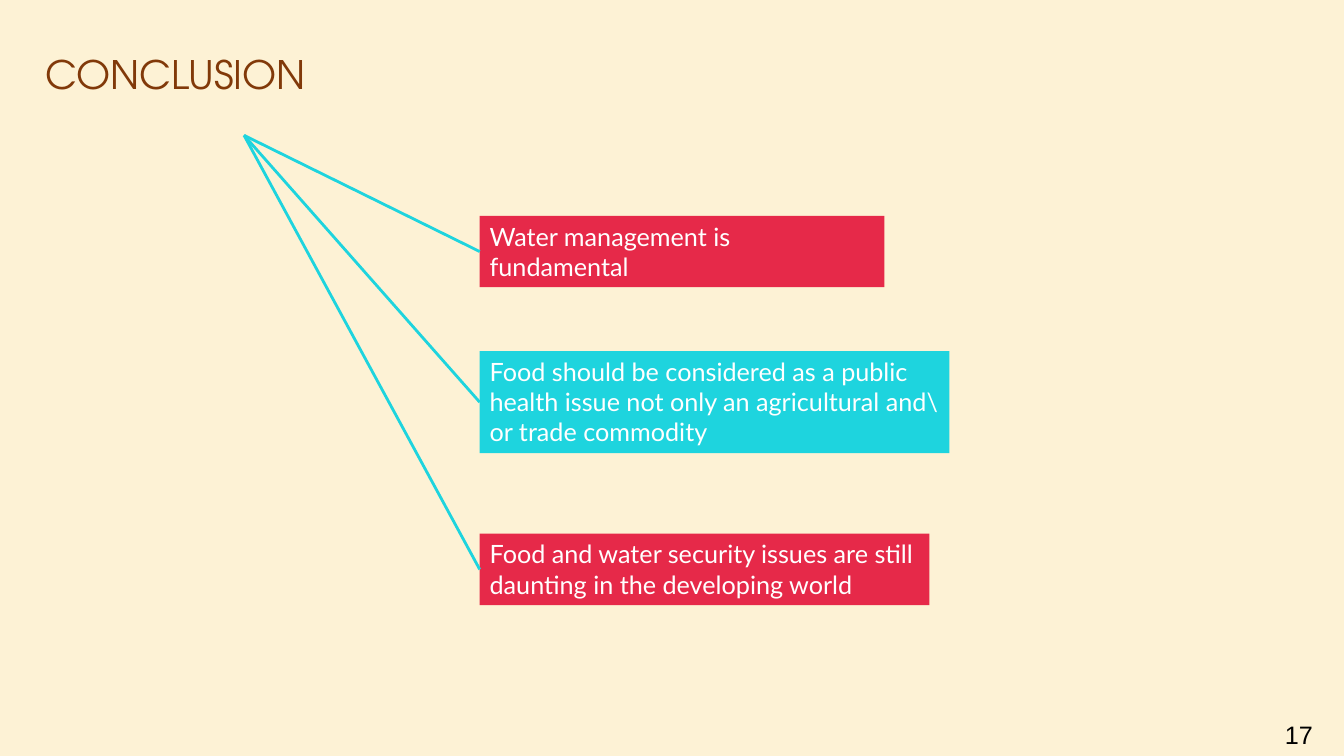
from pptx import Presentation
from pptx.dml.color import RGBColor
from pptx.enum.shapes import MSO_CONNECTOR, MSO_SHAPE
from pptx.enum.text import MSO_ANCHOR, PP_ALIGN
from pptx.util import Cm, Pt
from lxml import etree

RECT = MSO_SHAPE.RECTANGLE
STRAIGHT = MSO_CONNECTOR.STRAIGHT
TOP, MIDDLE = MSO_ANCHOR.TOP, MSO_ANCHOR.MIDDLE
LEFT = PP_ALIGN.LEFT
DRAWING_NS = "http://schemas.openxmlformats.org/drawingml/2006/main"

CREAM, BROWN, RED, CYAN = "FDF2D5", "813909", "E62949", "1ED4DE"
WHITE, BLACK = "FFFFFF", "000000"
LEFT_SIDE = 1

# Top offset, width and height in cm, fill, text
POINTS = [
    (0, 10.2, 1.8, RED, "Water management is fundamental"),
    (3.41, 11.84, 2.57, CYAN,
     "Food should be considered as a public health issue "
     "not only an agricultural and\\ or trade commodity"),
    (8.01, 11.33, 1.8, RED,
     "Food and water security issues are still daunting in the developing world"),
]


def rgb(hex_color):
    return RGBColor.from_string(hex_color)


def write(sp, text, font, size, color, anchor=TOP):
    tf = sp.text_frame
    tf.word_wrap = True
    tf.vertical_anchor = anchor
    p = tf.paragraphs[0]
    p.alignment = LEFT
    r = p.add_run()
    r.text = text
    r.font.name = font
    r.font.size = Pt(size)
    r.font.color.rgb = rgb(color)
    return p


def add_title(s, x, y, w, h):
    sp = s.shapes.title
    sp.left, sp.top, sp.width, sp.height = Cm(x), Cm(y), Cm(w), Cm(h)
    p = write(sp, "CONCLUSION", "TeX Gyre Adventor", 28, BROWN, MIDDLE)
    p.line_spacing = 0.9


def add_point(s, x, y, w, h, fill, text):
    sp = s.shapes.add_shape(RECT, Cm(x), Cm(y), Cm(w), Cm(h))
    sp.shadow.inherit = False
    sp.fill.solid()
    sp.fill.fore_color.rgb = rgb(fill)
    sp.line.fill.background()
    write(sp, text, "Lato", 18, WHITE)
    return sp


def add_ray(s, x, y, sp):
    ray = s.shapes.add_connector(
        STRAIGHT, Cm(x), Cm(y), sp.left, sp.top + sp.height // 2)
    ray.end_connect(sp, LEFT_SIDE)
    ray.line.color.rgb = rgb(CYAN)
    ray.line.width = Pt(2)
    etree.SubElement(ray._element.spPr, f"{{{DRAWING_NS}}}effectLst")


def add_fan(s, x, y):
    # Rays leave the top left corner and reach each point's left side
    for top, w, h, fill, text in POINTS:
        sp = add_point(s, x + 5.94, y + 2.03 + top, w, h, fill, text)
        add_ray(s, x, y, sp)


def add_page_number(s, x, y, w, h):
    sp = s.shapes.add_textbox(Cm(x), Cm(y), Cm(w), Cm(h))
    write(sp, "17", "Arial", 18, BLACK)


def main():
    prs = Presentation()
    prs.slide_width, prs.slide_height = Cm(33.87), Cm(19.05)
    s = prs.slides.add_slide(prs.slide_layouts[5])
    s.background.fill.solid()
    s.background.fill.fore_color.rgb = rgb(CREAM)

    add_title(s, 0.89, 0.94, 32.16, 2)
    add_fan(s, 6.15, 3.41)
    add_page_number(s, 32.13, 18.01, 1.74, 1.04)
    prs.save("out.pptx")


if __name__ == "__main__":
    main()
